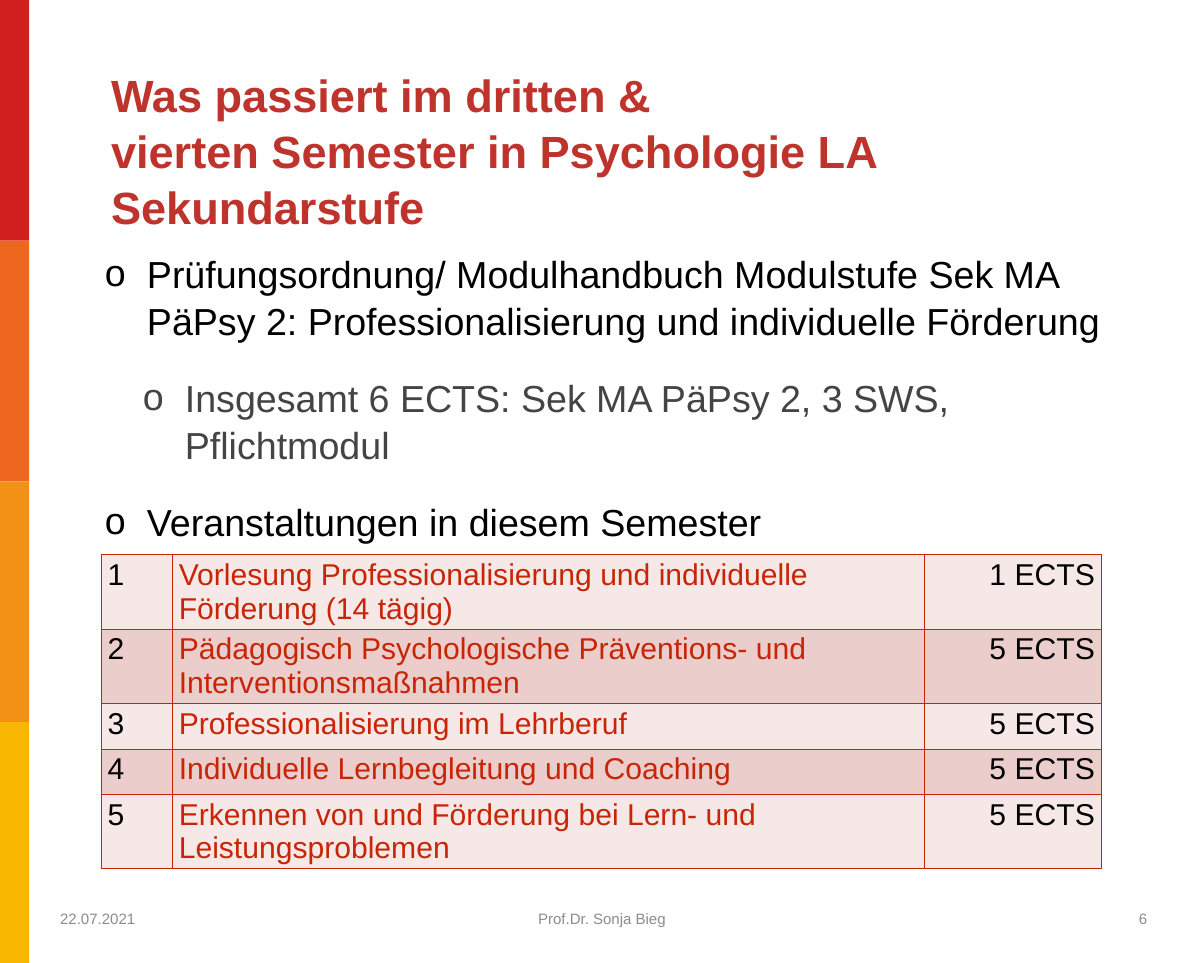
from lxml import etree
from pptx import Presentation
from pptx import util as u
from pptx.dml.color import RGBColor
from pptx.enum import shapes, text
from pptx.oxml import ns

FONT = "Arial"
WHITE = RGBColor(0xFF, 0xFF, 0xFF)
BLACK = RGBColor(0x00, 0x00, 0x00)
TITLE_RED = RGBColor(0xBE, 0x34, 0x2C)
TABLE_RED = RGBColor(0xC8, 0x25, 0x06)
DARK_GREY = RGBColor(0x44, 0x44, 0x44)
FOOTER_GREY = RGBColor(0x8C, 0x8C, 0x8C)
ROW_FILLS = [RGBColor(0xF5, 0xE8, 0xE7), RGBColor(0xEB, 0xCD, 0xCC)]
BAR_COLOURS = [
    RGBColor(0xD1, 0x1F, 0x20),
    RGBColor(0xEE, 0x67, 0x1F),
    RGBColor(0xF2, 0x91, 0x15),
    RGBColor(0xF9, 0xB6, 0x00),
]
SLIDE_HEIGHT = 14.22


def add_run(paragraph, words, size, colour, bold=False):
    run = paragraph.add_run()
    run.text = words
    run.font.name = FONT
    run.font.size = u.Pt(size)
    run.font.bold = bold
    run.font.color.rgb = colour


def place(shape, left, top, width, height, anchor, inset):
    """Set the position of a text shape and the layout of its frame."""
    shape.left, shape.top = u.Inches(left), u.Inches(top)
    shape.width, shape.height = u.Inches(width), u.Inches(height)
    frame = shape.text_frame
    frame.word_wrap = True
    frame.auto_size = text.MSO_AUTO_SIZE.NONE
    frame.vertical_anchor = anchor
    frame.margin_left = frame.margin_right = u.Inches(inset)
    frame.margin_top = frame.margin_bottom = u.Inches(0.06)
    return frame


presentation = Presentation()
presentation.slide_width = u.Inches(17.78)
presentation.slide_height = u.Inches(SLIDE_HEIGHT)
slide = presentation.slides.add_slide(presentation.slide_layouts[1])
slide.background.fill.solid()
slide.background.fill.fore_color.rgb = WHITE

# Colour bar on the left edge
bar_height = SLIDE_HEIGHT / len(BAR_COLOURS)
for index, colour in enumerate(BAR_COLOURS):
    bar = slide.shapes.add_shape(
        shapes.MSO_SHAPE.RECTANGLE,
        0, u.Inches(index * bar_height), u.Inches(0.43), u.Inches(bar_height))
    bar.shadow.inherit = False
    bar.fill.solid()
    bar.fill.fore_color.rgb = colour
    bar.line.fill.background()

# Title
title_frame = place(slide.shapes.title, 1.58, 1.24, 15.43, 1.93,
                    text.MSO_ANCHOR.MIDDLE, 0.06)
title_lines = [
    "Was passiert im dritten &",
    "vierten Semester in Psychologie LA Sekundarstufe",
]
for index, line in enumerate(title_lines):
    paragraph = title_frame.add_paragraph() if index else title_frame.paragraphs[0]
    paragraph.alignment = text.PP_ALIGN.LEFT
    paragraph.line_spacing = 1.04
    paragraph.space_before = u.Pt(0)
    add_run(paragraph, line, 48, TITLE_RED, bold=True)

# Bulleted list
body_frame = place(slide.placeholders[1], 1.49, 3.62, 15.02, 4.83,
                   text.MSO_ANCHOR.TOP, 0.06)
bullets = [
    (0, "Prüfungsordnung/ Modulhandbuch Modulstufe Sek MA PäPsy 2: "
        "Professionalisierung und individuelle Förderung", BLACK),
    (1, "Insgesamt 6 ECTS: Sek MA PäPsy 2, 3 SWS, Pflichtmodul", DARK_GREY),
    (0, "Veranstaltungen in diesem Semester", BLACK),
]
for index, (level, words, colour) in enumerate(bullets):
    paragraph = body_frame.add_paragraph() if index else body_frame.paragraphs[0]
    paragraph.level = level
    paragraph.alignment = text.PP_ALIGN.LEFT
    paragraph.line_spacing = 1.04
    paragraph.space_before = u.Pt(32 if index else 0)
    properties = paragraph._p.get_or_add_pPr()
    properties.set("marL", str(u.Inches(0.62 + 0.56 * level)))
    properties.set("indent", str(u.Inches(-0.62)))
    etree.SubElement(properties, ns.qn("a:buFont")).set("typeface", FONT)
    etree.SubElement(properties, ns.qn("a:buChar")).set("char", "o")
    add_run(paragraph, words, 40, colour)

# Course table
courses = [
    ("1", "Vorlesung Professionalisierung und individuelle Förderung (14 tägig)", "1 ECTS"),
    ("2", "Pädagogisch Psychologische Präventions- und Interventionsmaßnahmen", "5 ECTS"),
    ("3", "Professionalisierung im Lehrberuf", "5 ECTS"),
    ("4", "Individuelle Lernbegleitung und Coaching", "5 ECTS"),
    ("5", "Erkennen von und Förderung bei Lern- und Leistungsproblemen", "5 ECTS"),
]
column_widths = [1.05, 11.11, 2.62]
row_heights = [1.1, 1.1, 0.67, 0.67, 1.1]
column_colours = [BLACK, TABLE_RED, BLACK]
column_alignments = [text.PP_ALIGN.LEFT, text.PP_ALIGN.LEFT, text.PP_ALIGN.RIGHT]
table = slide.shapes.add_table(
    len(courses), len(column_widths), u.Inches(1.49), u.Inches(8.19),
    u.Inches(sum(column_widths)), u.Inches(sum(row_heights))).table
table.first_row = False
table.horz_banding = False
for column, width in zip(table.columns, column_widths):
    column.width = u.Inches(width)
for row_index, course in enumerate(courses):
    table.rows[row_index].height = u.Inches(row_heights[row_index])
    for column_index, words in enumerate(course):
        cell = table.cell(row_index, column_index)
        cell_properties = cell._tc.get_or_add_tcPr()
        for side in ("a:lnL", "a:lnR", "a:lnT", "a:lnB"):
            border = etree.SubElement(cell_properties, ns.qn(side), w=str(u.Pt(1)))
            border_fill = etree.SubElement(border, ns.qn("a:solidFill"))
            etree.SubElement(border_fill, ns.qn("a:srgbClr"), val=str(TABLE_RED))
        cell.fill.solid()
        cell.fill.fore_color.rgb = ROW_FILLS[row_index % 2]
        paragraph = cell.text_frame.paragraphs[0]
        paragraph.alignment = column_alignments[column_index]
        add_run(paragraph, words, 32, column_colours[column_index])

# Footer
footers = [
    (0.79, 4, text.PP_ALIGN.LEFT, "22.07.2021"),
    (5.89, 6, text.PP_ALIGN.CENTER, "Prof.Dr. Sonja Bieg"),
    (12.56, 4.48, text.PP_ALIGN.RIGHT, "6"),
]
for left, width, alignment, words in footers:
    box = slide.shapes.add_textbox(0, 0, 0, 0)
    frame = place(box, left, 13.18, width, 0.76, text.MSO_ANCHOR.MIDDLE, 0.1)
    paragraph = frame.paragraphs[0]
    paragraph.alignment = alignment
    add_run(paragraph, words, 16, FOOTER_GREY)

presentation.save("out.pptx")
